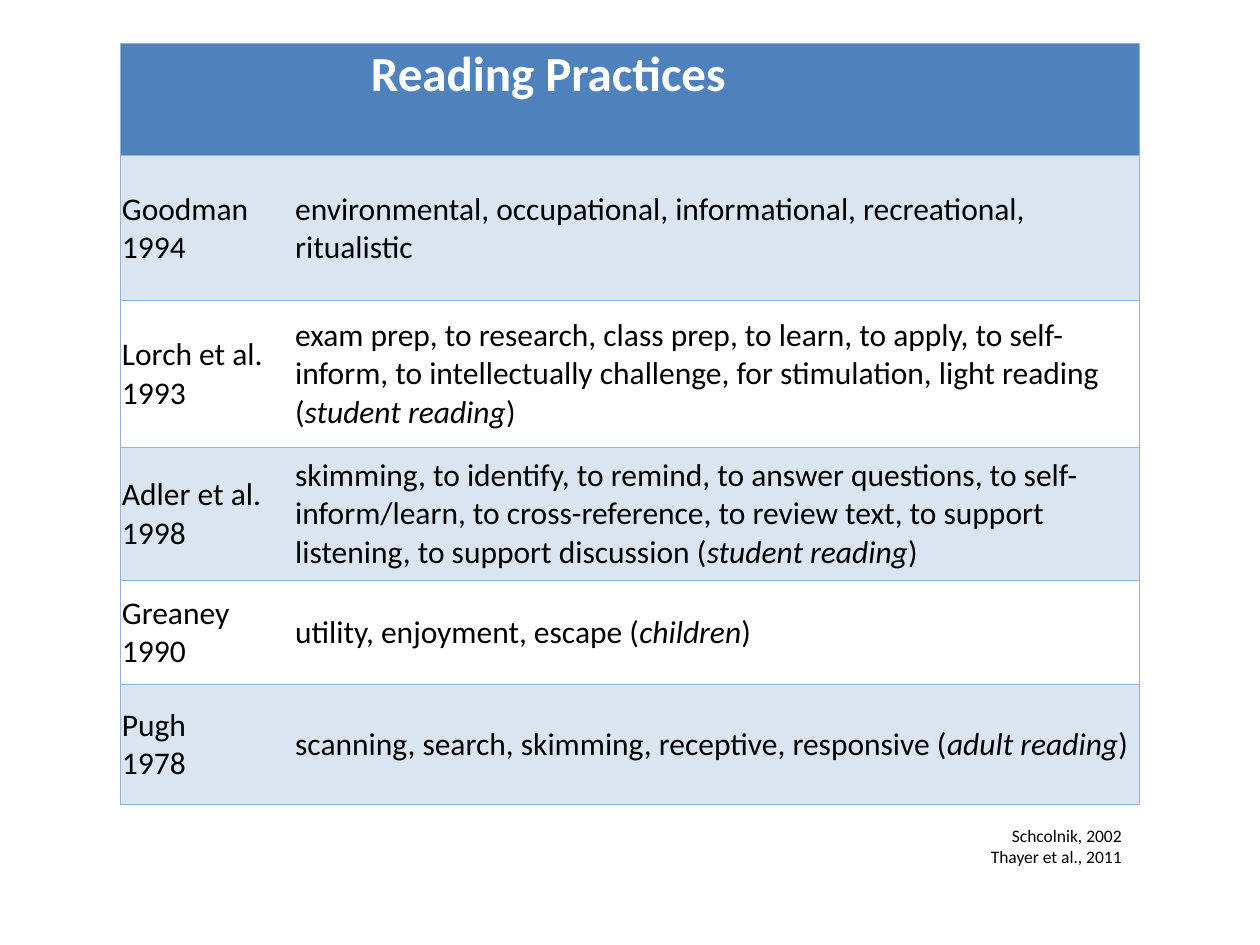
from lxml import etree
from pptx import Presentation
from pptx.dml.color import RGBColor
from pptx.enum.text import MSO_ANCHOR, PP_ALIGN
from pptx.oxml.ns import qn
from pptx.util import Pt

MIDDLE, TOP = MSO_ANCHOR.MIDDLE, MSO_ANCHOR.TOP
RIGHT = PP_ALIGN.RIGHT
BLUE = RGBColor(0x4F, 0x81, 0xBD)
PALE_BLUE = RGBColor(0xDB, 0xE5, 0xF1)
BORDER_BLUE = RGBColor(0x95, 0xB3, 0xD7)
WHITE = RGBColor(0xFF, 0xFF, 0xFF)
BLACK = RGBColor(0, 0, 0)
FONT = "Calibri"

COLUMN_WIDTHS = (99, 483)
ROW_HEIGHTS = (64, 82.5, 84, 76, 59.5, 68.5)
CELL_INSET = 0.7
TITLE_INDENT = 44
TITLE = "Reading Practices"
STUDIES = (
    ("Goodman", "1994", "environmental, occupational, informational, recreational, ritualistic", ""),
    ("Lorch et al.", "1993", "exam prep, to research, class prep, to learn, to apply, to self-inform, "
     "to intellectually challenge, for stimulation, light reading", "student reading"),
    ("Adler et al.", "1998", "skimming, to identify, to remind, to answer questions, "
     "to self-inform/learn, to cross-reference, to review text, to support listening, "
     "to support discussion", "student reading"),
    ("Greaney", "1990", "utility, enjoyment, escape", "children"),
    ("Pugh", "1978", "scanning, search, skimming, receptive, responsive", "adult reading"),
)
CITATIONS = ("Schcolnik, 2002", "Thayer et al., 2011")


def style_font(paragraph, size, color=BLACK, bold=False):
    """Set the font of a whole paragraph."""
    font = paragraph.font
    font.name, font.size, font.bold = FONT, Pt(size), bold
    font.color.rgb = color


def set_borders(cell, hidden_side):
    """Draw thin lines on every side of a cell except the hidden one."""
    properties = cell._tc.get_or_add_tcPr()
    for side in ("lnL", "lnR", "lnT", "lnB"):
        line = etree.SubElement(properties, qn(f"a:{side}"), w=str(Pt(0.5)))
        if side == hidden_side:
            etree.SubElement(line, qn("a:noFill"))
        else:
            fill = etree.SubElement(line, qn("a:solidFill"))
            etree.SubElement(fill, qn("a:srgbClr"), val=str(BORDER_BLUE))


def format_cell(cell, hidden_side, color, anchor):
    """Apply insets, borders, anchor and fill to a cell."""
    cell.margin_left = cell.margin_right = cell.margin_top = Pt(CELL_INSET)
    cell.margin_bottom = Pt(0)
    cell.vertical_anchor = anchor
    set_borders(cell, hidden_side)
    if color is None:
        cell.fill.background()
    else:
        cell.fill.solid()
        cell.fill.fore_color.rgb = color


def write_lines(text_frame, lines, size):
    """Write one paragraph per line and return the paragraphs."""
    text_frame.text = "\n".join(lines)
    for paragraph in text_frame.paragraphs:
        style_font(paragraph, size)
    return text_frame.paragraphs


def write_practices(cell, practices, readers):
    """Write the practices, with the readers in italics between brackets."""
    paragraph = cell.text_frame.paragraphs[0]
    style_font(paragraph, 18)
    if not readers:
        paragraph.add_run().text = practices
        return
    for text, italic in ((f"{practices} (", False), (readers, True), (")", False)):
        run = paragraph.add_run()
        run.text = text
        run.font.italic = italic


def add_practices_table(slide, left, top):
    """Build the table of reading practices by study."""
    frame = slide.shapes.add_table(
        len(ROW_HEIGHTS), len(COLUMN_WIDTHS), Pt(left), Pt(top),
        Pt(sum(COLUMN_WIDTHS)), Pt(sum(ROW_HEIGHTS)))
    table = frame.table
    table.horz_banding = False
    for column, width in zip(table.columns, COLUMN_WIDTHS):
        column.width = Pt(width)
    for index, (row, height) in enumerate(zip(table.rows, ROW_HEIGHTS)):
        row.height = Pt(height)
        color = BLUE if index == 0 else PALE_BLUE if index % 2 else None
        for cell, hidden_side in zip(row.cells, ("lnR", "lnL")):
            format_cell(cell, hidden_side, color, MIDDLE if index else TOP)

    title_cell = table.cell(0, 1)
    title_cell.text = TITLE
    title_cell.margin_left = Pt(TITLE_INDENT)
    style_font(title_cell.text_frame.paragraphs[0], 28, WHITE, True)
    for index, (author, year, practices, readers) in enumerate(STUDIES, 1):
        write_lines(table.cell(index, 0).text_frame, (author, year), 18)
        write_practices(table.cell(index, 1), practices, readers)


def add_citations(slide, left, top, width, height):
    """Place the right-aligned citations under the table."""
    text_frame = slide.shapes.add_textbox(Pt(left), Pt(top), Pt(width), Pt(height)).text_frame
    text_frame.word_wrap = True
    for paragraph in write_lines(text_frame, CITATIONS, 10):
        paragraph.alignment = RIGHT


def main():
    """Build and save the slide."""
    presentation = Presentation()
    presentation.slide_width, presentation.slide_height = Pt(720), Pt(540)
    slide = presentation.slides.add_slide(presentation.slide_layouts[6])
    add_practices_table(slide, 69, 25)
    add_citations(slide, 72, 468, 576, 31.5)
    presentation.save("out.pptx")


if __name__ == "__main__":
    main()
